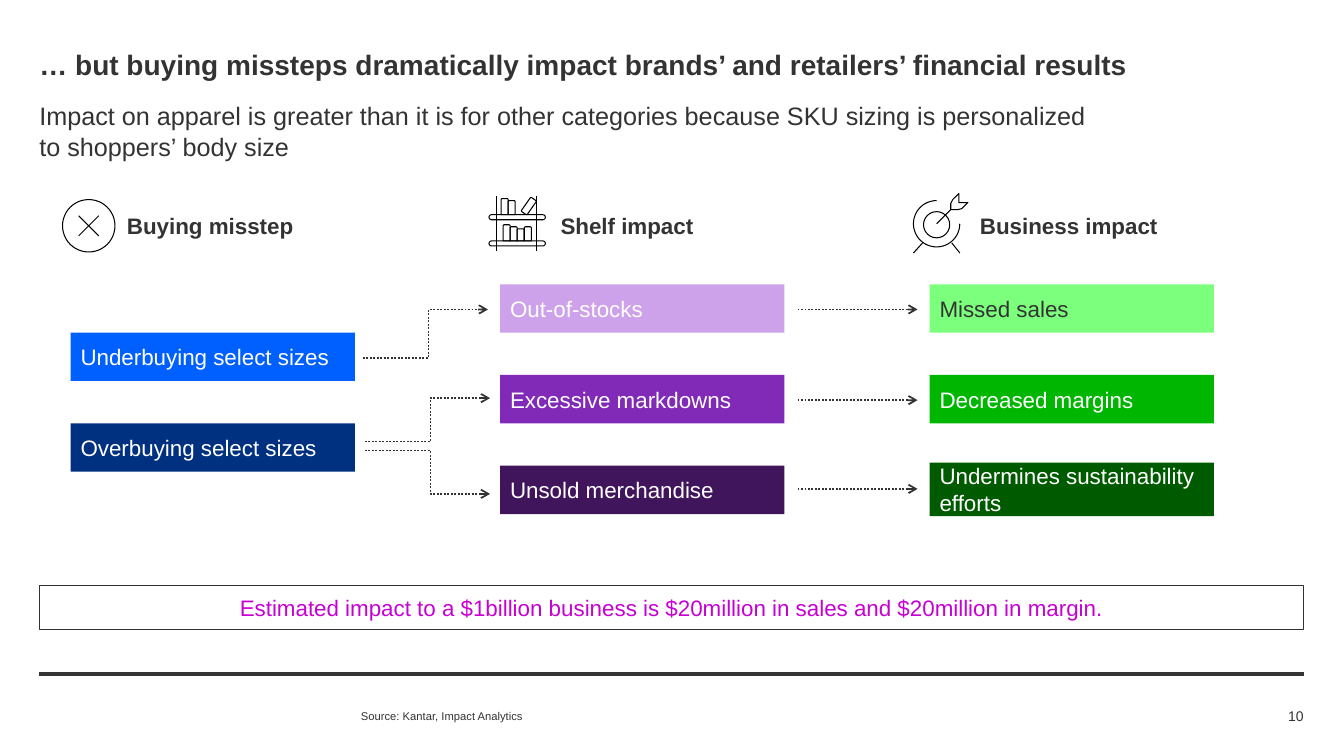
from lxml import etree
from pptx import Presentation
from pptx import util as u
from pptx.dml.color import RGBColor
from pptx.enum import dml, shapes, text
from pptx.oxml import ns

INK = RGBColor(0x33, 0x33, 0x33)
BLACK = RGBColor(0, 0, 0)
WHITE = RGBColor(0xFF, 0xFF, 0xFF)
MAGENTA = RGBColor(0xC7, 0x00, 0xD3)
BLUE, NAVY = RGBColor(0x00, 0x60, 0xFF), RGBColor(0x00, 0x30, 0x80)
LILAC, VIOLET, PLUM = (RGBColor(0xCE, 0xA2, 0xEA), RGBColor(0x80, 0x2A, 0xB7),
                       RGBColor(0x40, 0x15, 0x5C))
MINT, GREEN, FOREST = (RGBColor(0x7C, 0xFF, 0x7C), RGBColor(0x00, 0xB6, 0x00),
                       RGBColor(0x00, 0x5B, 0x00))
KIND = shapes.MSO_SHAPE
LEFT, WIDTH = 0.39, 12.54
CARD_WIDTH, CARD_HEIGHT = 2.82, 0.48
MIDDLE = text.MSO_ANCHOR.MIDDLE


def inches(*lengths):
    return [u.Inches(length) for length in lengths]


def write(shape, words, size, color=INK, bold=False, align=text.PP_ALIGN.LEFT,
          anchor=text.MSO_ANCHOR.TOP, insets=(0, 0)):
    frame = shape.text_frame
    side, end = inches(*insets)
    layout = {"word_wrap": True, "auto_size": text.MSO_AUTO_SIZE.NONE,
              "vertical_anchor": anchor, "margin_left": side,
              "margin_right": side, "margin_top": end, "margin_bottom": end}
    for name, value in layout.items():
        setattr(frame, name, value)
    para = frame.paragraphs[0]
    para.text = words
    para.alignment = align
    for name, value in {"name": "Arial", "size": u.Pt(size), "bold": bold}.items():
        setattr(para.font, name, value)
    para.font.color.rgb = color


def add_label(page, box, words, size, **format_values):
    write(page.shapes.add_textbox(*inches(*box)), words, size, **format_values)


def stroke(shape, color=BLACK, width=0.75, arrow=False):
    shape.line.color.rgb = color
    shape.line.width = u.Pt(width)
    if arrow:
        shape.line.dash_style = dml.MSO_LINE.ROUND_DOT
        outline = shape.element.spPr.find(ns.qn("a:ln"))
        etree.SubElement(outline, ns.qn("a:tailEnd"), type="arrow")


def add_line(page, start, end, **format_values):
    line = page.shapes.add_connector(shapes.MSO_CONNECTOR.STRAIGHT,
                                     *inches(*start, *end))
    stroke(line, **format_values)
    etree.SubElement(line.element.spPr, ns.qn("a:effectLst"))


def add_outline(page, points, close=False, **format_values):
    points = [inches(*point) for point in points]
    builder = page.shapes.build_freeform(*points[0])
    builder.add_line_segments(points[1:], close=close)
    shape = builder.convert_to_shape()
    shape.shadow.inherit = False
    shape.fill.background()
    stroke(shape, **format_values)


def add_figure(page, kind, box, fill=None, line=BLACK):
    shape = page.shapes.add_shape(kind, *inches(*box))
    shape.shadow.inherit = False
    if fill is None:
        shape.fill.background()
        stroke(shape, line)
    else:
        shape.fill.solid()
        shape.fill.fore_color.rgb = fill
        shape.line.fill.background()
    return shape


def add_card(page, box, words, fill, color=WHITE):
    write(add_figure(page, KIND.RECTANGLE, box, fill), words, 16, color=color,
          anchor=MIDDLE, insets=(0.1, 0.05))


def add_header(page):
    title = page.shapes.title
    title.left, title.top, title.width, title.height = inches(LEFT, 0.47, WIDTH, 0.44)
    write(title, "… but buying missteps dramatically impact brands’ and "
          "retailers’ financial results", 20, bold=True)
    add_label(page, (LEFT, 1, WIDTH, 0.6),
              "Impact on apparel is greater than it is for other categories because "
              "SKU sizing is personalized\vto shoppers’ body size", 18)


def add_cross_icon(page, x, y):
    add_figure(page, KIND.OVAL, (x, y, 0.52, 0.52))
    near, far = 0.16, 0.36
    add_line(page, (x + far, y + near), (x + near, y + far))
    add_line(page, (x + near, y + near), (x + far, y + far))


def add_shelf_icon(page, x, y):
    for post in (0.07, 0.47):
        add_line(page, (x + post, y), (x + post, y + 0.55))
    for board in (0.19, 0.45):
        shape = add_figure(page, KIND.ROUNDED_RECTANGLE, (x, y + board, 0.56, 0.05))
        shape.adjustments[0] = 0.5
    # Upright books: offset, height, shelf they stand on
    for offset, height, shelf in ((0.12, 0.16, 0.19), (0.19, 0.14, 0.19),
                                  (0.14, 0.16, 0.45), (0.21, 0.14, 0.45),
                                  (0.28, 0.12, 0.45), (0.35, 0.14, 0.45)):
        add_figure(page, KIND.ROUND_2_SAME_RECTANGLE,
                   (x + offset, y + shelf - height, 0.07, height))
    leaning = add_figure(page, KIND.ROUNDED_RECTANGLE, (x + 0.36, y + 0.02, 0.07, 0.17))
    leaning.rotation = 35


def add_target_icon(page, x, y):
    ring = add_figure(page, KIND.ARC, (x, y + 0.07, 0.46, 0.46))
    ring.adjustments[0], ring.adjustments[1] = 0, 162  # right side round to the top
    add_figure(page, KIND.OVAL, (x + 0.1, y + 0.18, 0.26, 0.26))
    add_line(page, (x + 0.23, y + 0.3), (x + 0.37, y + 0.16))
    feather = ((0.39, 0.06), (0.37, 0.1), (0.37, 0.16), (0.44, 0.16), (0.48, 0.15),
               (0.54, 0.09), (0.45, 0.09), (0.45, 0))
    add_outline(page, [(x + dx, y + dy) for dx, dy in feather], close=True)
    for top, foot in ((0.09, 0), (0.38, 0.46)):
        add_line(page, (x + top, y + 0.49), (x + foot, y + 0.59))


def add_column(page, x, heading, heading_x, cards):
    add_label(page, (heading_x, 2.1, 2.6, 0.37), heading, 16, bold=True)
    for y, height, words, fill, color in cards:
        add_card(page, (x, y, CARD_WIDTH, height), words, fill, color)


def add_arrows(page):
    dotted = {"color": INK, "width": 1.25, "arrow": True}
    # From missteps to shelf impacts
    for x, start, end in ((3.6, 3.55, 3.07), (3.62, 4.47, 4.9), (3.62, 4.38, 3.95)):
        bend = x + 0.65
        add_outline(page, [(x, start), (bend, start), (bend, end), (x + 1.24, end)],
                    **dotted)
    # From shelf impacts to business impacts
    for y in (3.07, 3.97, 4.85):
        add_line(page, (7.91, y), (9.1, y), **dotted)


def add_footer(page):
    add_line(page, (LEFT, 6.69), (LEFT + WIDTH, 6.69), color=INK, width=3)
    add_label(page, (3.58, 6.99, 8.2, 0.22), "Source: Kantar, Impact Analytics", 8,
              anchor=MIDDLE)
    add_label(page, (11.87, 6.99, 1.06, 0.22), "10", 10, anchor=MIDDLE,
              align=text.PP_ALIGN.RIGHT)


def main():
    deck = Presentation()
    deck.slide_width, deck.slide_height = inches(13.33, 7.5)
    page = deck.slides.add_slide(deck.slide_layouts.get_by_name("Title Only"))
    add_header(page)

    # Three columns of cause and effect
    tops = [2.82 + 0.9 * row for row in range(3)]
    add_column(page, 0.7, "Buying misstep", 1.26, [
        (3.3, CARD_HEIGHT, "Underbuying select sizes", BLUE, WHITE),
        (4.2, CARD_HEIGHT, "Overbuying select sizes", NAVY, WHITE)])
    add_column(page, 4.96, "Shelf impact", 5.56, [
        (tops[0], CARD_HEIGHT, "Out-of-stocks", LILAC, WHITE),
        (tops[1], CARD_HEIGHT, "Excessive markdowns", VIOLET, WHITE),
        (tops[2], CARD_HEIGHT, "Unsold merchandise", PLUM, WHITE)])
    add_column(page, 9.22, "Business impact", 9.72, [
        (tops[0], CARD_HEIGHT, "Missed sales", MINT, INK),
        (tops[1], CARD_HEIGHT, "Decreased margins", GREEN, WHITE),
        (4.59, 0.53, "Undermines sustainability efforts", FOREST, WHITE)])
    add_arrows(page)

    # Column icons
    add_cross_icon(page, 0.62, 1.98)
    add_shelf_icon(page, 4.85, 1.94)
    add_target_icon(page, 9.06, 1.92)

    # Takeaway
    takeaway = add_figure(page, KIND.RECTANGLE, (LEFT, 5.81, WIDTH, 0.44), line=INK)
    write(takeaway, "Estimated impact to a $1billion business is $20million in sales "
          "and $20million in margin.", 16, color=MAGENTA, anchor=MIDDLE,
          align=text.PP_ALIGN.CENTER, insets=(0.1, 0.05))
    add_footer(page)
    deck.save("out.pptx")


if __name__ == "__main__":
    main()
